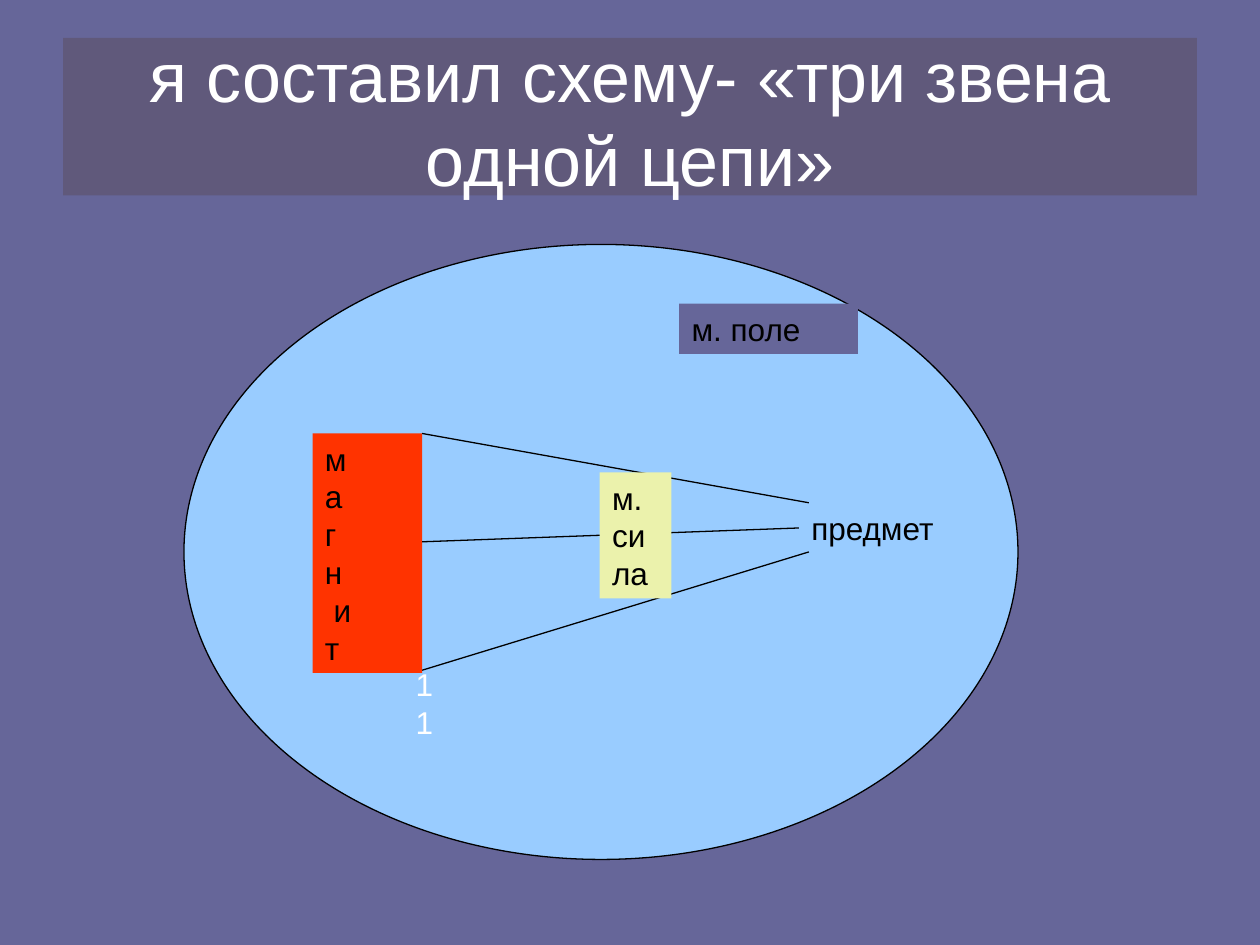
"""Builds a slide with a diagram of a magnet, its force and an object inside a field."""
from dataclasses import dataclass
from typing import Optional

import pptx
import pptx.dml.color
import pptx.enum.shapes
import pptx.enum.text
import pptx.oxml
import pptx.util

Pt = pptx.util.Pt
RGBColor = pptx.dml.color.RGBColor
MSO_SHAPE = pptx.enum.shapes.MSO_SHAPE
MSO_ANCHOR = pptx.enum.text.MSO_ANCHOR
MSO_AUTO_SIZE = pptx.enum.text.MSO_AUTO_SIZE
PP_ALIGN = pptx.enum.text.PP_ALIGN

BACKGROUND = RGBColor(0x66, 0x66, 0x99)
TITLE_FILL = RGBColor(0x60, 0x59, 0x7B)
FIELD_FILL = RGBColor(0x99, 0xCC, 0xFF)
MAGNET_FILL = RGBColor(0xFF, 0x33, 0x00)
FORCE_FILL = RGBColor(0xEB, 0xF2, 0xAC)
BLACK = RGBColor(0x00, 0x00, 0x00)
WHITE = RGBColor(0xFF, 0xFF, 0xFF)


@dataclass
class Label:
    text: str
    left: float
    top: float
    width: float
    height: float
    fill: Optional[RGBColor] = None
    color: RGBColor = BLACK


@dataclass
class Ray:
    x1: float
    y1: float
    x2: float
    y2: float


FIELD = Label("", 105.1, 139.7, 476.6, 351.4, FIELD_FILL)
THING = Label("предмет", 456.5, 287.3, 102.2, 28.8, FIELD_FILL)
MAGNET = Label("м\nа\nг\nн\n и\nт", 178.6, 247.7, 62.6, 136.8, MAGNET_FILL)
FIELD_NAME = Label("м. поле", 388.1, 173.5, 102.2, 28.8, BACKGROUND)
FORCE = Label("м. сила", 342.7, 270, 41, 72, FORCE_FILL)
NUMBER = Label("11", 230.4, 376.6, 14.4, 50.4, color=WHITE)

MAGNET_EDGE = MAGNET.left + MAGNET.width
TOP_RAY = Ray(MAGNET_EDGE, 247.7, 462.2, 287.3)
BOTTOM_RAY = Ray(MAGNET_EDGE, 383, 462.2, 315.4)
MIDDLE_RAY = Ray(THING.left, 301.7, MAGNET_EDGE, 309.6)


def write(tf, text: str, size: float = 18, color: RGBColor = BLACK,
          align=PP_ALIGN.LEFT, anchor=MSO_ANCHOR.TOP,
          auto_size=MSO_AUTO_SIZE.SHAPE_TO_FIT_TEXT) -> None:
    tf.word_wrap = True
    tf.auto_size = auto_size
    tf.vertical_anchor = anchor
    for i, line in enumerate(text.split("\n")):
        p = tf.paragraphs[0] if i == 0 else tf.add_paragraph()
        p.alignment = align
        r = p.add_run()
        r.text = line
        r.font.name = "Arial"
        r.font.size = Pt(size)
        r.font.color.rgb = color


def add_label(s, label: Label):
    box = [Pt(v) for v in (label.left, label.top, label.width, label.height)]
    if label.fill is None:
        sp = s.shapes.add_textbox(*box)
    else:
        sp = s.shapes.add_shape(MSO_SHAPE.RECTANGLE, *box)
        sp.shadow.inherit = False
        sp.fill.solid()
        sp.fill.fore_color.rgb = label.fill
        sp.line.fill.background()
    write(sp.text_frame, label.text, color=label.color)
    return sp


def add_field(s, field: Label) -> None:
    sp = s.shapes.add_shape(MSO_SHAPE.OVAL, Pt(field.left), Pt(field.top),
                            Pt(field.width), Pt(field.height))
    sp.shadow.inherit = False
    sp.fill.solid()
    sp.fill.fore_color.rgb = field.fill
    sp.line.color.rgb = BLACK
    sp.line.width = Pt(0.75)


def add_ray(s, ray: Ray):
    line = s.shapes.add_connector(pptx.enum.shapes.MSO_CONNECTOR.STRAIGHT,
                                  Pt(ray.x1), Pt(ray.y1), Pt(ray.x2), Pt(ray.y2))
    line.line.color.rgb = BLACK
    line.line.width = Pt(0.75)
    line._element.spPr.append(pptx.oxml.parse_xml(
        '<a:effectLst xmlns:a="http://schemas.openxmlformats.org/drawingml/2006/main"/>'))
    return line


def add_title(s, text: str) -> None:
    sp = s.shapes.title
    sp.left, sp.top, sp.width, sp.height = Pt(36), Pt(21.6), Pt(648), Pt(90)
    sp.fill.solid()
    sp.fill.fore_color.rgb = TITLE_FILL
    write(sp.text_frame, text, size=40, color=WHITE, align=PP_ALIGN.CENTER,
          anchor=MSO_ANCHOR.MIDDLE, auto_size=MSO_AUTO_SIZE.NONE)


def main() -> None:
    prs = pptx.Presentation()
    prs.slide_width, prs.slide_height = Pt(720), Pt(540)
    s = prs.slides.add_slide(prs.slide_layouts[5])
    s.background.fill.solid()
    s.background.fill.fore_color.rgb = BACKGROUND

    add_title(s, "я составил схему- «три звена одной цепи»")
    add_field(s, FIELD)
    thing = add_label(s, THING)
    for label in (MAGNET, FIELD_NAME):
        add_label(s, label)
    for ray in (TOP_RAY, BOTTOM_RAY):
        add_ray(s, ray)
    add_ray(s, MIDDLE_RAY).begin_connect(thing, 1)
    for label in (FORCE, NUMBER):
        add_label(s, label)

    prs.save("out.pptx")


if __name__ == "__main__":
    main()
